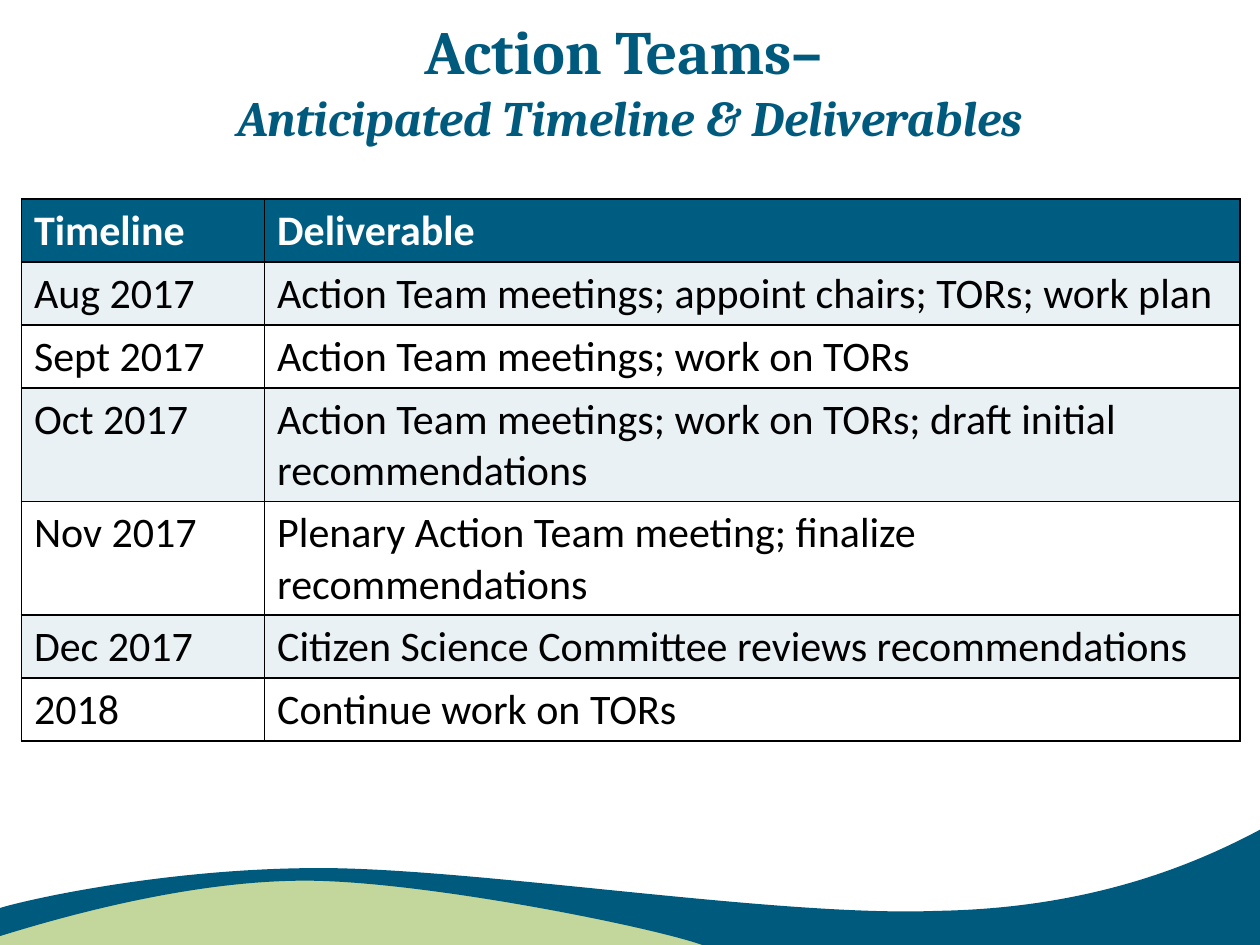
from dataclasses import dataclass
from lxml.etree import SubElement
from pptx import Presentation
from pptx.dml.color import RGBColor
from pptx.enum.text import MSO_ANCHOR, PP_ALIGN
from pptx.oxml.ns import qn
from pptx.util import Inches, Pt


@dataclass(frozen=True)
class Theme:
    blue: str = "005A7E"
    header: str = "005D82"
    band: str = "E9F1F5"
    white: str = "FFFFFF"
    black: str = "000000"
    green: str = "C3D69B"
    title_font: str = "Cambria"
    body_font: str = "Calibri"
    title_size: float = 35.1
    subtitle_size: float = 28.3
    body_size: float = 24


THEME = Theme()

ROWS = [
    ("Timeline", "Deliverable"),
    ("Aug 2017", "Action Team meetings; appoint chairs; TORs; work plan"),
    ("Sept 2017", "Action Team meetings; work on TORs"),
    ("Oct 2017", "Action Team meetings; work on TORs; draft initial recommendations"),
    ("Nov 2017", "Plenary Action Team meeting; finalize recommendations"),
    ("Dec 2017", "Citizen Science Committee reviews recommendations"),
    ("2018", "Continue work on TORs"),
]

GREEN_HILL = [
    [(5.67, 0.93)],
    [(5.34, 0.83), (3.46, 0.4), (2.52, 0.37)],
    [(1.57, 0.34), (0.42, 0.65), (0, 0.75)],
    [(0, 0.92)],
]
BLUE_WAVE = [
    [(10, 0.93)],
    [(5.6, 0.93)],
    [(5.24, 0.79), (3.37, 0.41), (2.42, 0.41)],
    [(1.47, 0.41), (0.42, 0.72), (0, 0.85)],
    [(-0.01, 0.63)],
    [(0.17, 0.57), (1.3, 0.31), (2.54, 0.31)],
    [(3.78, 0.31), (6.18, 0.7), (7.43, 0.65)],
    [(8.71, 0.63), (9.54, 0.25), (10.01, 0)],
]


def add_run(p, text, color, **font):
    r = p.add_run()
    r.text = text
    for name, value in font.items():
        setattr(r.font, name, value)
    r.font.color.rgb = RGBColor.from_string(color)


def curve_segments(sp, segments):
    lines = iter(list(sp._element.iter(qn("a:lnTo"))))
    for segment in segments[1:]:
        group = [next(lines) for _ in segment]
        if len(group) == 3:
            curve = group[0].makeelement(qn("a:cubicBezTo"))
            group[0].addprevious(curve)
            for line in group:
                curve.append(line[0])
                line.getparent().remove(line)


def add_waves(s, left, top):
    for segments, color in ((GREEN_HILL, THEME.green), (BLUE_WAVE, THEME.blue)):
        points = [(Inches(left + x), Inches(top + y)) for segment in segments for x, y in segment]
        builder = s.shapes.build_freeform(*points[0])
        builder.add_line_segments(points[1:], close=True)
        sp = builder.convert_to_shape()
        curve_segments(sp, segments)
        sp.shadow.inherit = False
        sp.fill.solid()
        sp.fill.fore_color.rgb = RGBColor.from_string(color)
        sp.line.fill.background()


def add_title(s, left, top, width, height):
    sp = s.shapes.add_textbox(*map(Inches, (left, top, width, height)))
    tf = sp.text_frame
    tf.word_wrap = True
    tf.vertical_anchor = MSO_ANCHOR.MIDDLE
    lines = (
        ("Action Teams– ", {"size": Pt(THEME.title_size)}),
        ("Anticipated Timeline & Deliverables",
         {"size": Pt(THEME.subtitle_size), "italic": True}),
    )
    for i, (text, font) in enumerate(lines):
        p = tf.add_paragraph() if i else tf.paragraphs[0]
        p.alignment = PP_ALIGN.CENTER
        add_run(p, text, THEME.blue, name=THEME.title_font, bold=True, **font)


def add_borders(cell):
    tcPr = cell._tc.get_or_add_tcPr()
    for i, side in enumerate(("lnL", "lnR", "lnT", "lnB")):
        ln = SubElement(tcPr, qn(f"a:{side}"), w=str(Pt(1)))
        fill = SubElement(ln, qn("a:solidFill"))
        SubElement(fill, qn("a:srgbClr"), val=THEME.black)
        tcPr.insert(i, ln)


def add_timeline(s, left, top, width, height, first_col, row_height):
    frame = s.shapes.add_table(len(ROWS), 2, *map(Inches, (left, top, width, height)))
    table = frame.table
    for column, size in zip(table.columns, (first_col, width - first_col)):
        column.width = Inches(size)
    for row in table.rows:
        row.height = Inches(row_height)
    frame.height = Inches(height)
    for i, texts in enumerate(ROWS):
        header = i == 0
        fill = THEME.header if header else (THEME.white, THEME.band)[i % 2]
        color = THEME.white if header else THEME.black
        for j, text in enumerate(texts):
            cell = table.cell(i, j)
            cell.fill.solid()
            cell.fill.fore_color.rgb = RGBColor.from_string(fill)
            add_borders(cell)
            add_run(cell.text_frame.paragraphs[0], text, color,
                    name=THEME.body_font, size=Pt(THEME.body_size), bold=header)


def main():
    prs = Presentation()
    prs.slide_width, prs.slide_height = Inches(10), Inches(7.5)
    s = prs.slides.add_slide(prs.slide_layouts[6])
    add_waves(s, 0, 6.58)
    add_title(s, 0, -0.17, 10, 1.61)
    add_timeline(s, 0.17, 1.58, 9.67, 4.3, 1.93, 0.41)
    prs.save("out.pptx")


if __name__ == "__main__":
    main()
